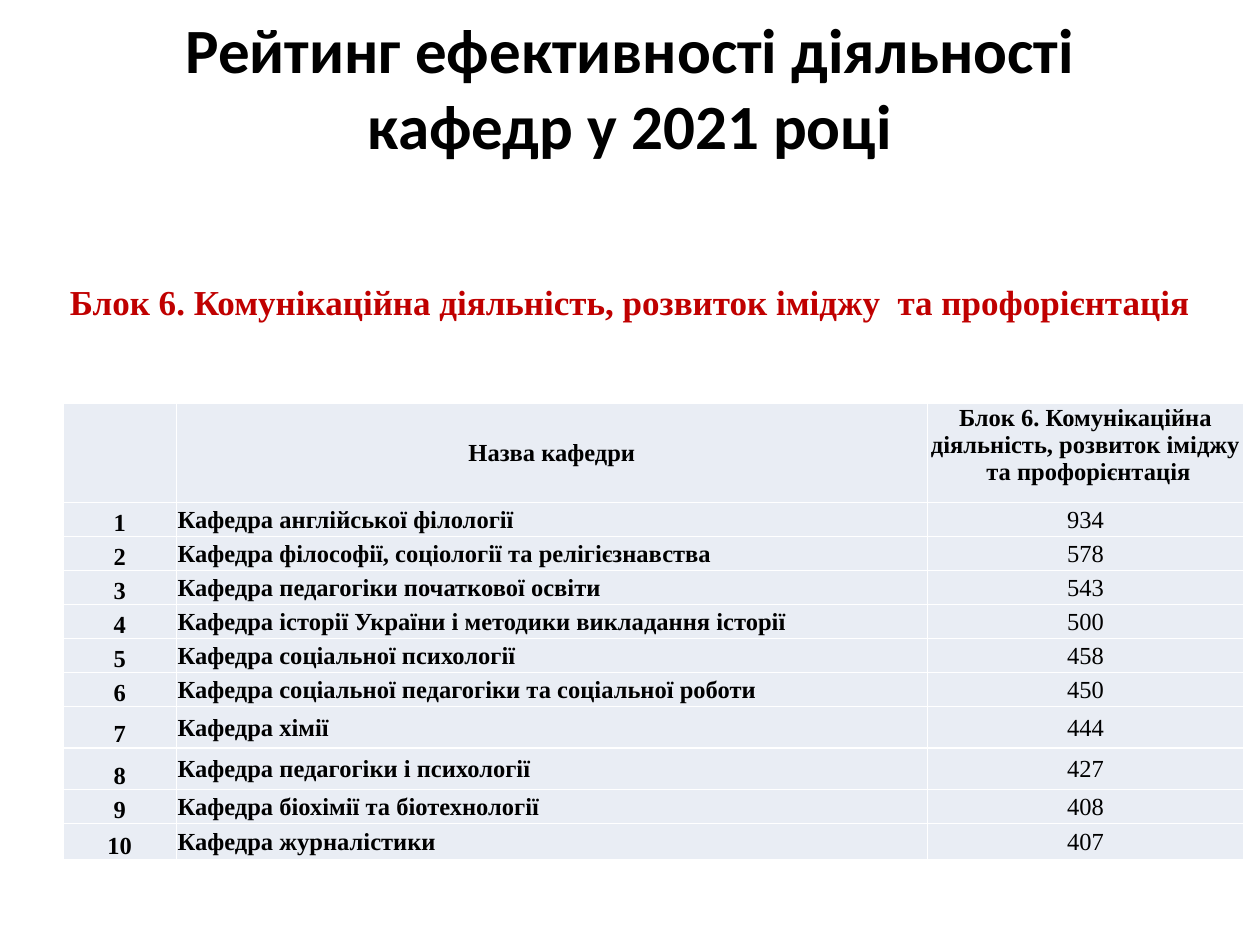
from lxml.etree import SubElement as Sub
from pptx import Presentation
from pptx.dml.color import RGBColor
from pptx.enum.text import MSO_ANCHOR as Anchor, MSO_AUTO_SIZE as Fit, PP_ALIGN as Align
from pptx.oxml.ns import qn
from pptx.util import Inches, Pt


def tint(code):
    return RGBColor.from_string(code)


def write(frame, text, size, face, code, bold=True, align=Align.CENTER):
    frame.text = text
    para = frame.paragraphs[0]
    para.alignment = align
    font = para.runs[0].font
    for key, val in {"size": Pt(size), "name": face, "bold": bold}.items():
        setattr(font, key, val)
    font.color.rgb = tint(code)


SERIF = "Times New Roman"
BLOCK = "Блок 6. Комунікаційна діяльність, розвиток іміджу  та профорієнтація"
depts = [
    ("Кафедра англійської філології", 934),
    ("Кафедра філософії, соціології та релігієзнавства", 578),
    ("Кафедра педагогіки початкової освіти", 543),
    ("Кафедра історії України і методики викладання історії", 500),
    ("Кафедра соціальної психології", 458),
    ("Кафедра соціальної педагогіки та соціальної роботи", 450),
    ("Кафедра хімії", 444),
    ("Кафедра педагогіки і психології", 427),
    ("Кафедра біохімії та біотехнології", 408),
    ("Кафедра журналістики", 407),
]
rows = [("", "Назва кафедри", BLOCK)]
rows += [(str(rank), name, str(score)) for rank, (name, score) in enumerate(depts, 1)]
widths = [0.9, 5.96, 2.51]
heights = [0.79] + [0.27] * 6 + [0.33] * 2 + [0.27, 0.29]

deck = Presentation()
deck.slide_width, deck.slide_height = Inches(10), Inches(7.5)
slide = deck.slides.add_slide(deck.slide_layouts[5])

title = slide.shapes.title
place = {"left": 0.5, "top": 0.3, "width": 9, "height": 0.77}
for key, val in place.items():
    setattr(title, key, Inches(val))
title.text_frame.vertical_anchor = Anchor.MIDDLE
title.text_frame.auto_size = Fit.NONE
write(title.text_frame, "Рейтинг ефективності діяльності кафедр у 2021 році", 36, "Calibri", "000000")

label = slide.shapes.add_textbox(Inches(0.42), Inches(2.18), Inches(9.16), Inches(0.44)).text_frame
label.word_wrap = False
label.auto_size = Fit.SHAPE_TO_FIT_TEXT
write(label, BLOCK, 20, SERIF, "C00000")

table = slide.shapes.add_table(
    len(rows), len(widths), Inches(0.5), Inches(3.2), Inches(sum(widths)), Inches(sum(heights))
).table
table.first_row = table.horz_banding = False
for col, width in zip(table.columns, widths):
    col.width = Inches(width)
for row, height in zip(table.rows, heights):
    row.height = Inches(height)

pads = {"margin_left": 0.01, "margin_right": 0.01, "margin_top": 0.01, "margin_bottom": 0}
for r, row in enumerate(rows):
    for c, text in enumerate(row):
        cell = table.cell(r, c)
        props = cell._tc.get_or_add_tcPr()
        for side in ("lnL", "lnR", "lnT", "lnB"):
            line = Sub(props, qn("a:" + side), w=str(Pt(1)))
            Sub(Sub(line, qn("a:solidFill")), qn("a:srgbClr"), val="FFFFFF")
        cell.fill.solid()
        cell.fill.fore_color.rgb = tint("E9EDF4")
        if not text:
            continue
        for key, val in pads.items():
            setattr(cell, key, Inches(val))
        if r == 0:
            cell.vertical_anchor = Anchor.MIDDLE if c == 1 else Anchor.TOP
        else:
            cell.vertical_anchor = Anchor.BOTTOM if c == 0 else Anchor.MIDDLE
        align = Align.LEFT if r and c == 1 else Align.CENTER
        write(cell.text_frame, text, 14, SERIF, "000000", r == 0 or c < 2, align)

deck.save("out.pptx")
